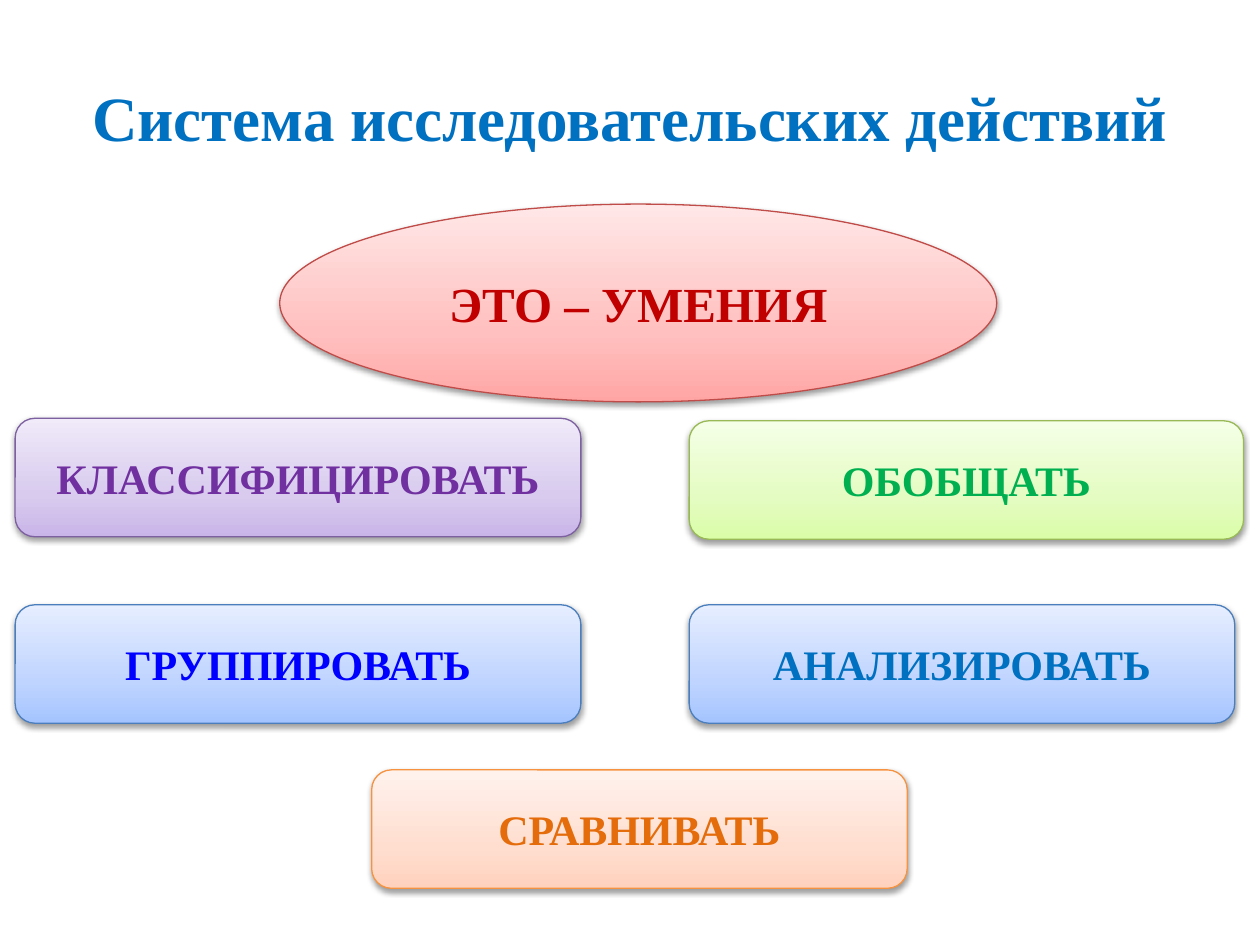
from copy import deepcopy
from lxml.etree import SubElement
from pptx import Presentation
from pptx.dml.color import RGBColor as RGB
from pptx.enum.shapes import MSO_SHAPE as Kind
from pptx.enum.text import MSO_ANCHOR as Anchor, PP_ALIGN as Align
from pptx.oxml.ns import qn
from pptx.util import Inches, Pt

WIDE, HIGH = Inches(10), Inches(7.5)
FONT = "Times New Roman"
SKY = RGB(0x00, 0x70, 0xC0)
BLUE = RGB(0x00, 0x00, 0xFF)
PLUM = RGB(0x70, 0x30, 0xA0)
LEAF = RGB(0x00, 0xB0, 0x50)
RUST = RGB(0xE4, 0x6C, 0x0A)
WINE = RGB(0xC0, 0x00, 0x00)
BLACK = RGB(0x00, 0x00, 0x00)

# Each tint: outline, then gradient from the bottom up
RED_TINT = [RGB(0xBF, 0x4C, 0x48), RGB(0xFF, 0xA6, 0xA5), RGB(0xFF, 0xC0, 0xBF), RGB(0xFF, 0xE7, 0xE7)]
PLUM_TINT = [RGB(0x7D, 0x60, 0xA0), RGB(0xC9, 0xB5, 0xE8), RGB(0xD8, 0xCB, 0xEE), RGB(0xF0, 0xEA, 0xF9)]
LEAF_TINT = [RGB(0x98, 0xB9, 0x55), RGB(0xDA, 0xFD, 0xA7), RGB(0xE4, 0xFC, 0xC2), RGB(0xF5, 0xFF, 0xE7)]
BLUE_TINT = [RGB(0x4B, 0x7E, 0xBC), RGB(0xA4, 0xC4, 0xFF), RGB(0xBF, 0xD4, 0xFF), RGB(0xE6, 0xEE, 0xFF)]
RUST_TINT = [RGB(0xF6, 0x92, 0x40), RGB(0xFF, 0xD2, 0xBD), RGB(0xFF, 0xDE, 0xD0), RGB(0xFF, 0xF2, 0xED)]

LEFT, RIGHT = 1.2, 54.7
TALL = 12.53


def place(x, y, w, h):
    """Turn percentages of the slide into lengths."""
    return [round(n * side / 100) for n, side in zip((x, y, w, h), (WIDE, HIGH) * 2)]


def write(shape, text, size, color):
    """Set one bold centred line in a shape."""
    frame = shape.text_frame
    frame.word_wrap = True
    frame.vertical_anchor = Anchor.MIDDLE
    frame.text = text
    line = frame.paragraphs[0]
    line.alignment = Align.CENTER
    font = line.runs[0].font
    font.name, font.size, font.bold = FONT, Pt(size), True
    font.color.rgb = color


def shade(shape, tones):
    """Fill a shape with a three-stop upward gradient."""
    fill = shape.fill
    fill.gradient()
    fill.gradient_angle = 90
    stops = shape._element.spPr.find(qn("a:gradFill")).find(qn("a:gsLst"))
    stops.append(deepcopy(stops[-1]))
    for stop, spot, tone in zip(fill.gradient_stops, (0, 0.35, 1), tones):
        stop.position = spot
        stop.color.rgb = tone


def drop(shape):
    """Cast a soft shadow straight below a shape."""
    shape.shadow.inherit = False
    effects = shape._element.spPr.find(qn("a:effectLst"))
    cast = SubElement(effects, qn("a:outerShdw"), blurRad=str(Pt(3.15)),
                      dist=str(Pt(1.57)), dir="5400000", rotWithShape="0")
    color = SubElement(cast, qn("a:srgbClr"), val=str(BLACK))
    SubElement(color, qn("a:alpha"), val="38000")


def title(slide, text):
    """Add the heading."""
    write(slide.shapes.add_textbox(*place(5, 4, 90, 16.67)), text, 36, SKY)


def badge(slide, kind, area, text, size, color, tint):
    """Add a shaded, outlined shape with its label."""
    shape = slide.shapes.add_shape(kind, *place(*area))
    edge, *tones = tint
    shade(shape, tones)
    shape.line.color.rgb = edge
    shape.line.width = Pt(0.75)
    drop(shape)
    write(shape, text, size, color)


def main():
    """Build the slide and save it."""
    deck = Presentation()
    deck.slide_width, deck.slide_height = WIDE, HIGH
    slide = deck.slides.add_slide(deck.slide_layouts[6])
    title(slide, "Система исследовательских действий")
    skills = [
        (22.2, 81.47, 42.5, "СРАВНИВАТЬ", RUST, RUST_TINT),
        (LEFT, 44.27, 44.9, "КЛАССИФИЦИРОВАТЬ", PLUM, PLUM_TINT),
        (RIGHT, 44.53, 44, "ОБОБЩАТЬ", LEAF, LEAF_TINT),
        (RIGHT, 64, 43.3, "АНАЛИЗИРОВАТЬ", SKY, BLUE_TINT),
        (LEFT, 64, 44.9, "ГРУППИРОВАТЬ", BLUE, BLUE_TINT),
    ]
    skills[0] = (29.5,) + skills[0][1:]
    for x, y, w, text, color, tint in skills:
        badge(slide, Kind.ROUNDED_RECTANGLE, (x, y, w, TALL), text, 24, color, tint)
    badge(slide, Kind.OVAL, (22.2, 21.6, 56.9, 20.93), "ЭТО – УМЕНИЯ", 28, WINE, RED_TINT)
    deck.save("out.pptx")


if __name__ == "__main__":
    main()
